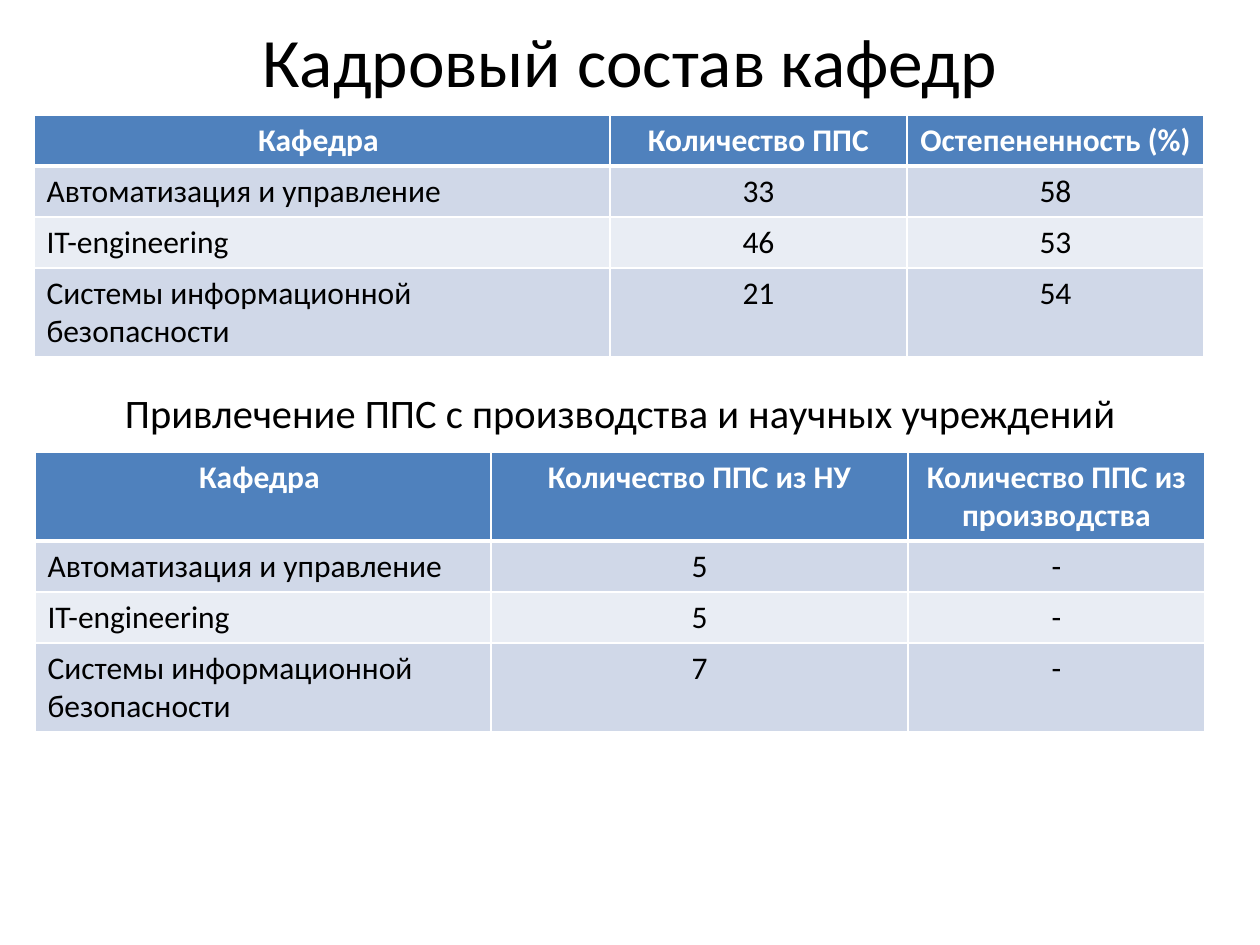
from pptx import Presentation
from pptx.dml.color import RGBColor
from pptx.enum.text import MSO_ANCHOR, PP_ALIGN
from pptx.oxml import parse_xml
from pptx.oxml.ns import nsdecls
from pptx.util import Pt

PX = 914400 // 126  # EMU per px
FONT = "Calibri"
COLORS = {"header": "4F81BD", "odd": "D0D8E8", "even": "E9EDF4",
          "white": "FFFFFF", "black": "000000"}

deck = Presentation()
deck.slide_width, deck.slide_height = 1260 * PX, 945 * PX
page = deck.slides.add_slide(deck.slide_layouts[6])


def style_text(frame, size, color, bold=False, align=PP_ALIGN.CENTER):
    para = frame.paragraphs[0]
    para.alignment = align
    for span in para.runs:
        span.font.name = FONT
        span.font.size = Pt(size)
        span.font.bold = bold
        span.font.color.rgb = RGBColor.from_string(COLORS[color])
    return para


def add_border(cell, side, points):
    cell._tc.get_or_add_tcPr().append(parse_xml(
        f'<a:{side} {nsdecls("a")} w="{Pt(points)}"><a:solidFill>'
        f'<a:srgbClr val="{COLORS["white"]}"/></a:solidFill></a:{side}>'))


# Title and subtitle: left, top, size, line spacing, text
headings = [
    (63, 16, 39.6, 1.0, "Кадровый состав кафедр"),
    (54, 373, 23.1, 0.8, "Привлечение ППС с производства и научных учреждений"),
]
for left, top, size, spacing, text in headings:
    box = page.shapes.add_textbox(left * PX, top * PX, 1134 * PX, 87 * PX)
    frame = box.text_frame
    frame.word_wrap = True
    frame.vertical_anchor = MSO_ANCHOR.MIDDLE
    frame.text = text
    style_text(frame, size, "black").line_spacing = spacing

# Tables: left, top, column widths, row heights, header, figures per department
departments = ["Автоматизация и управление", "IT-engineering",
               "Системы информационной безопасности"]
tables = [
    (34, 115, [576, 297, 297], [51, 51, 51, 89],
     ["Кафедра ", "Количество ППС", "Остепененность (%)"],
     [("33", "58"), ("46", "53"), ("21", "54")]),
    (35, 452, [456, 417, 297], [89, 51, 51, 89],
     ["Кафедра ", "Количество ППС из НУ", "Количество ППС из производства"],
     [("5", "-"), ("5", "-"), ("7", "-")]),
]
for left, top, widths, heights, header, figures in tables:
    rows = [header] + [[name, *values] for name, values in zip(departments, figures)]
    table = page.shapes.add_table(len(rows), len(widths), left * PX, top * PX,
                                  sum(widths) * PX, sum(heights) * PX).table
    for column, width in zip(table.columns, widths):
        column.width = width * PX
    for r, (texts, height) in enumerate(zip(rows, heights)):
        table.rows[r].height = height * PX
        fill = "header" if r == 0 else "odd" if r % 2 else "even"
        for c, text in enumerate(texts):
            cell = table.cell(r, c)
            cell.text_frame.text = text
            align = PP_ALIGN.LEFT if r and c == 0 else PP_ALIGN.CENTER
            style_text(cell.text_frame, 18, "black" if r else "white", r == 0, align)
            # Thick rule between the header and the body
            add_border(cell, "lnL", 1)
            add_border(cell, "lnR", 1)
            add_border(cell, "lnT", 3 if r == 1 else 1)
            add_border(cell, "lnB", 3 if r == 0 else 1)
            cell.fill.solid()
            cell.fill.fore_color.rgb = RGBColor.from_string(COLORS[fill])

deck.save("out.pptx")
